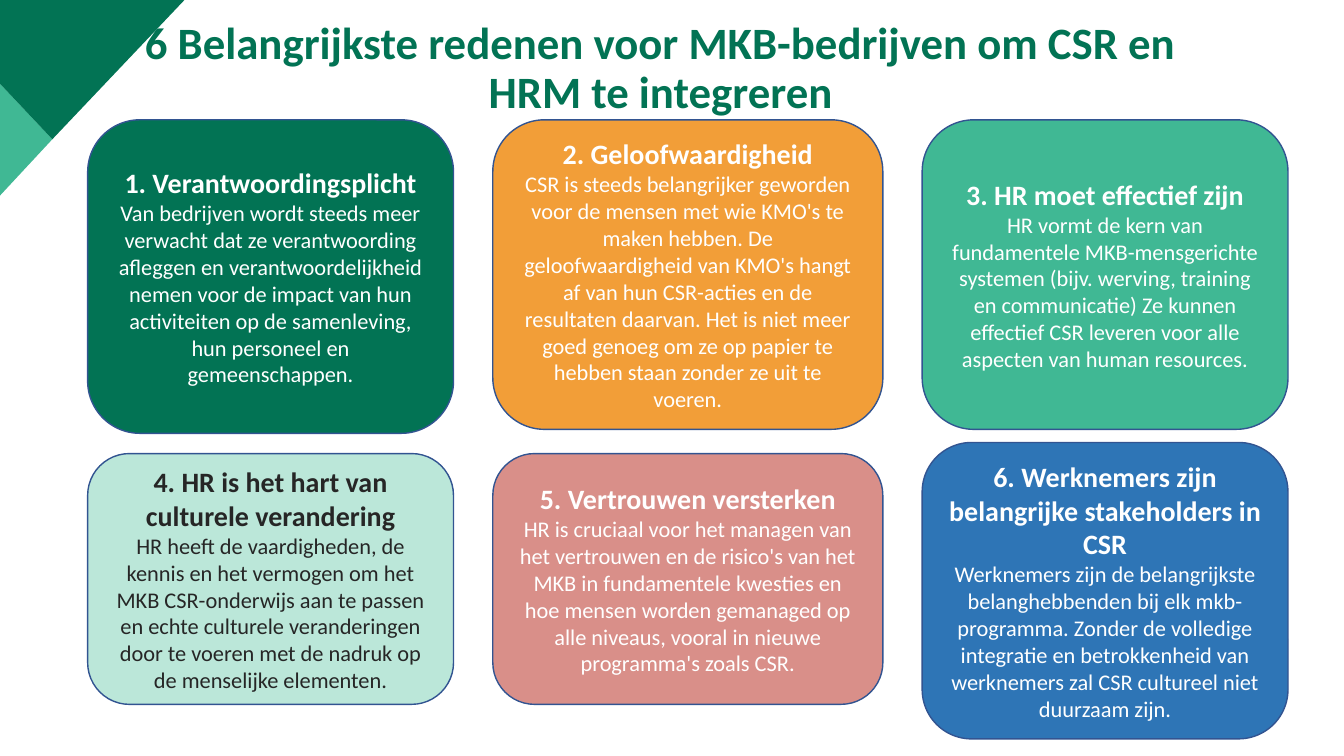
from pptx import Presentation
from pptx.dml.color import RGBColor
from pptx.enum.shapes import MSO_SHAPE
from pptx.enum.text import MSO_ANCHOR, PP_ALIGN
from pptx.util import Cm, Pt

ROUND = MSO_SHAPE.ROUNDED_RECTANGLE
MIDDLE = MSO_ANCHOR.MIDDLE
CENTER = PP_ALIGN.CENTER


def paint(target, color):
    target.solid()
    target.fore_color.rgb = RGBColor.from_string(color)


def write(para, text, size, bold, color):
    para.text = text
    para.alignment = CENTER
    para.font.name = "Calibri"
    para.font.size = Pt(size)
    para.font.bold = bold
    paint(para.font.fill, color)


deck = Presentation()
deck.slide_width = Cm(33.87)
deck.slide_height = Cm(19.05)
slide = deck.slides.add_slide(deck.slide_layouts[6])
shapes = slide.shapes

corners = [
    ("40B894", [(0, 2.11), (1.32, 3.51), (0, 4.93)]),
    ("027354", [(0, 0), (4.65, 0), (1.32, 3.51), (0, 2.11)]),
]
for color, points in corners:
    points = [(Cm(x), Cm(y)) for x, y in points]
    pen = shapes.build_freeform(*points[0])
    pen.add_line_segments(points[1:], close=True)
    corner = pen.convert_to_shape()
    corner.shadow.inherit = False
    paint(corner.fill, color)
    corner.line.fill.background()

title = shapes.add_textbox(Cm(2.21), Cm(-0.08), Cm(28.88), Cm(3.66))
frame = title.text_frame
frame.word_wrap = True
frame.vertical_anchor = MIDDLE
para = frame.paragraphs[0]
write(para, "6 Belangrijkste redenen voor MKB-bedrijven om CSR en HRM te integreren",
      32, True, "027354")
para.line_spacing = 0.9
para.space_before = Pt(10)

columns = [(2.21, 9.22), (12.42, 9.83), (23.24, 9.22)]
cards = [
    (3.02, 7.9, "027354", "FFFFFF", "1. Verantwoordingsplicht",
     "Van bedrijven wordt steeds meer verwacht dat ze verantwoording afleggen en "
     "verantwoordelijkheid nemen voor de impact van hun activiteiten op de "
     "samenleving, hun personeel en gemeenschappen."),
    (3.02, 7.8, "F29E38", "FFFFFF", "2. Geloofwaardigheid",
     "CSR is steeds belangrijker geworden voor de mensen met wie KMO's te maken "
     "hebben. De geloofwaardigheid van KMO's hangt af van hun CSR-acties en de "
     "resultaten daarvan. Het is niet meer goed genoeg om ze op papier te hebben "
     "staan zonder ze uit te voeren."),
    (3.02, 7.8, "40B894", "FFFFFF", "3. HR moet effectief zijn",
     "HR vormt de kern van fundamentele MKB-mensgerichte systemen (bijv. werving, "
     "training en communicatie) Ze kunnen effectief CSR leveren voor alle aspecten "
     "van human resources."),
    (11.43, 6.32, "BBE7D9", "262626", "4. HR is het hart van culturele verandering",
     "HR heeft de vaardigheden, de kennis en het vermogen om het MKB CSR-onderwijs "
     "aan te passen en echte culturele veranderingen door te voeren met de nadruk "
     "op de menselijke elementen."),
    (11.43, 6.32, "D98F89", "FFFFFF", "5. Vertrouwen versterken",
     "HR is cruciaal voor het managen van het vertrouwen en de risico's van het MKB "
     "in fundamentele kwesties en hoe mensen worden gemanaged op alle niveaus, "
     "vooral in nieuwe programma's zoals CSR."),
    (11.15, 7.47, "2E75B6", "FFFFFF",
     "6. Werknemers zijn belangrijke stakeholders in CSR",
     "Werknemers zijn de belangrijkste belanghebbenden bij elk mkb-programma. Zonder "
     "de volledige integratie en betrokkenheid van werknemers zal CSR cultureel "
     "niet duurzaam zijn."),
]
for i, (top, height, color, ink, head, body) in enumerate(cards):
    left, width = columns[i % 3]
    card = shapes.add_shape(ROUND, Cm(left), Cm(top), Cm(width), Cm(height))
    card.shadow.inherit = False
    paint(card.fill, color)
    paint(card.line.fill, "325491")
    card.line.width = Pt(1)
    frame = card.text_frame
    frame.word_wrap = True
    frame.vertical_anchor = MIDDLE
    write(frame.paragraphs[0], head, 20, True, ink)
    write(frame.add_paragraph(), body, 16, False, ink)

deck.save("out.pptx")
